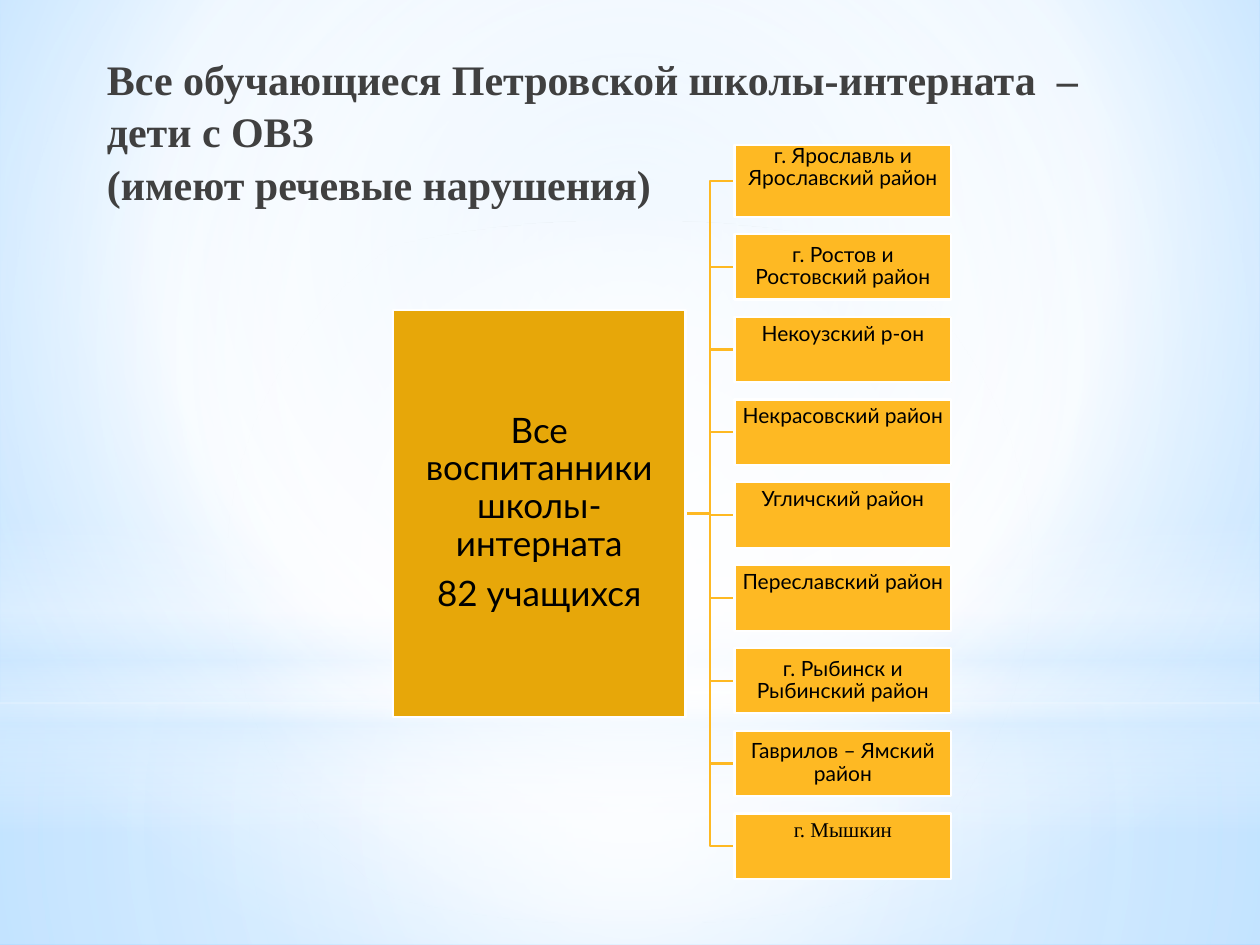
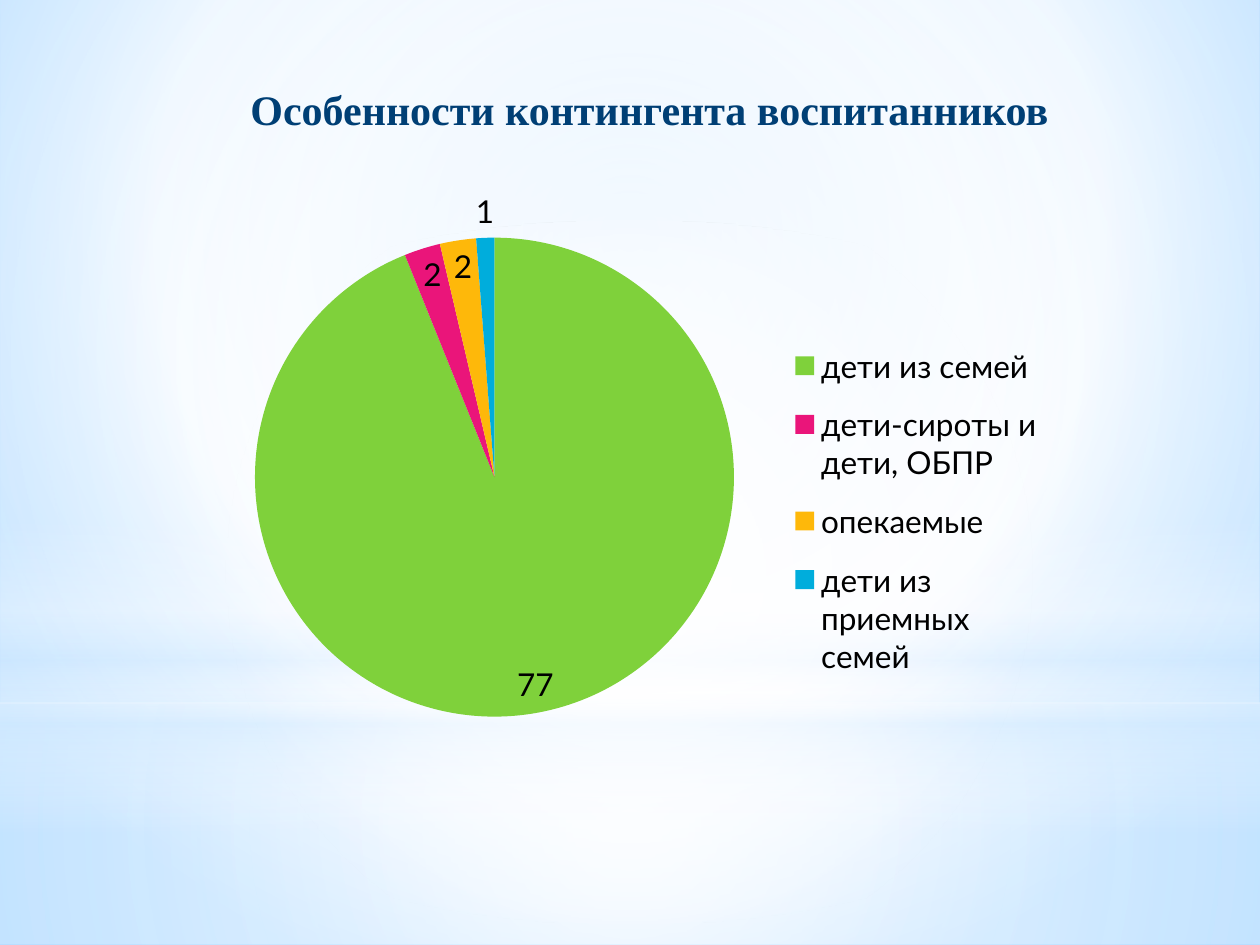
from pptx import Presentation
from pptx.chart.data import CategoryChartData
from pptx.dml.color import RGBColor
from pptx.enum.chart import XL_CHART_TYPE, XL_LABEL_POSITION, XL_LEGEND_POSITION
from pptx.enum.shapes import MSO_SHAPE
from pptx.enum.text import MSO_ANCHOR, PP_ALIGN
from pptx.oxml import parse_xml
from pptx.oxml.ns import nsdecls, qn
from pptx.util import Inches, Pt

RECT, OVAL = MSO_SHAPE.RECTANGLE, MSO_SHAPE.OVAL
TOP, MIDDLE = MSO_ANCHOR.TOP, MSO_ANCHOR.MIDDLE
LEFT, CENTER, RIGHT = PP_ALIGN.LEFT, PP_ALIGN.CENTER, PP_ALIGN.RIGHT
PIE, BEST_FIT = XL_CHART_TYPE.PIE, XL_LABEL_POSITION.BEST_FIT
LEGEND_RIGHT = XL_LEGEND_POSITION.RIGHT

SERIF, SANS = "Times New Roman", "Lato"
COLORS = {
    "white": "FFFFFF", "mist": "D6ECFF", "sky": "C2E3FF", "azure": "79C1FF",
    "text": "000000", "grey": "404040", "navy": "003F75",
    "root": "E7A709", "leaf": "FEB923",
    "green": "7FD13B", "pink": "EA157A", "amber": "FEB80A", "blue": "00ADDC",
}
CENTERED = (50, 50, 50, 50)

BACKDROP = [
    (RECT, (0, 5.58, 10, 1.92),
     [(0, "white", 91), (37, "white", 76), (100, "mist", 79)], CENTERED),
    (RECT, (0, 0, 10, 5.58),
     [(0, "white", 89), (48, "white", 62), (100, "mist", 79)], CENTERED),
    (RECT, (0, 4.12, 10, 2.5),
     [(0, "white", 0), (29, "white", 30), (45, "mist", 40),
      (55, "white", 26), (65, "mist", 60), (100, "white", 0)], None),
    (OVAL, (0, 1.75, 10, 5.58),
     [(0, "white", 100), (56, "white", 0)], CENTERED),
]

DISTRICTS = [
    ("г. Ярославль и Ярославский район", SANS, 0),
    ("г. Ростов и Ростовский район", SANS, None),
    ("Некоузский р-он", SANS, 0.05),
    ("Некрасовский район", SANS, 0.05),
    ("Угличский район", SANS, 0.05),
    ("Переславский район", SANS, 0.05),
    ("г. Рыбинск и Рыбинский район", SANS, None),
    ("Гаврилов – Ямский район", SANS, None),
    ("г. Мышкин", SERIF, 0.05),
]

PUPILS = [
    ("дети из семей", 77, "green"),
    ("дети-сироты и дети, ОБПР", 2, "pink"),
    ("опекаемые", 2, "amber"),
    ("дети из приемных семей", 1, "blue"),
]


def rgb(name):
    """Return a palette colour."""
    return RGBColor.from_string(COLORS[name])


def set_gradient(parent, stops, focus=None):
    """Replace the solid fill in parent by a circular or downward gradient."""
    marks = "".join(
        f'<a:gs pos="{pos * 1000}"><a:srgbClr val="{COLORS[name]}">'
        f'<a:alpha val="{alpha * 1000}"/></a:srgbClr></a:gs>'
        for pos, name, alpha in stops)
    course = '<a:lin ang="5400000" scaled="0"/>'
    if focus:
        sides = " ".join(f'{side}="{v * 1000}"' for side, v in zip("ltrb", focus))
        course = f'<a:path path="circle"><a:fillToRect {sides}/></a:path>'
    grad = parse_xml(f'<a:gradFill {nsdecls("a")} rotWithShape="1">'
                     f'<a:gsLst>{marks}</a:gsLst>{course}</a:gradFill>')
    parent.replace(parent.find(qn("a:solidFill")), grad)


def add_box(slide, kind, box, fill, line=None):
    """Add a flat filled shape."""
    s = slide.shapes.add_shape(kind, *map(Inches, box))
    s.shadow.inherit = False
    s.fill.solid()
    s.fill.fore_color.rgb = rgb(fill)
    if line:
        s.line.color.rgb = rgb(line)
        s.line.width = Pt(1.25)
    else:
        s.line.fill.background()
    return s


def write(s, text, font, size, color, align, bold=False, spacing=0.9):
    """Put text in a shape and format every run."""
    tf = s.text_frame
    tf.word_wrap = True
    tf.text = text
    for p in tf.paragraphs:
        p.alignment = align
        p.line_spacing = spacing
        p.space_after = Pt(size * 0.35)
        for r in p.runs:
            r.font.name, r.font.size, r.font.bold = font, Pt(size), bold
            r.font.color.rgb = rgb(color)
    return tf


def set_background(prs):
    """Give the master the sky gradient."""
    master = prs.slide_master
    master.background.fill.solid()
    set_gradient(master.element.find(".//" + qn("p:bgPr")),
                 [(0, "sky", 100), (60, "white", 100), (100, "azure", 100)],
                 (20, 10, 20, 60))


def add_base_slide(prs):
    """Add a blank slide with the light layers."""
    slide = prs.slides.add_slide(prs.slide_layouts[6])
    for kind, box, stops, focus in BACKDROP:
        s = add_box(slide, kind, box, "white")
        set_gradient(s.element.spPr, stops, focus)
    return slide


def add_title(slide, text, box, color, align):
    """Add the bold serif title."""
    s = slide.shapes.add_textbox(*map(Inches, box))
    write(s, text, SERIF, 24, color, align, True, 1.04)


def add_block(slide, box, fill, text, font, size, top=None):
    """Add a chart block, its text centred or starting at the given inset."""
    s = add_box(slide, RECT, box, fill, "white")
    tf = write(s, text, font, size, "text", CENTER)
    tf.margin_left = tf.margin_right = Inches(0.01)
    tf.margin_top, tf.margin_bottom = Inches(top or 0), 0
    tf.vertical_anchor = MIDDLE if top is None else TOP
    return s


def add_branch(slide, x1, y1, x2, y2):
    """Draw an elbow line between two points."""
    mid = (x1 + x2) / 2
    builder = slide.shapes.build_freeform(Inches(x1), Inches(y1))
    builder.add_line_segments(
        [(Inches(x), Inches(y)) for x, y in ((mid, y1), (mid, y2), (x2, y2))],
        close=False)
    s = builder.convert_to_shape()
    s.shadow.inherit = False
    s.fill.background()
    s.line.color.rgb = rgb("leaf")
    s.line.width = Pt(1.25)


def add_district_tree(slide, x, y):
    """Draw the root block and its districts from the given top left corner."""
    root = (x, y + 1.31, 2.32, 3.23)
    leaf_x, leaf_y, gap = x + 2.71, y, 0.137
    root_y = root[1] + root[3] / 2
    for i, (text, font, top) in enumerate(DISTRICTS):
        height = 0.52 if i else 0.57
        add_branch(slide, x + root[2], root_y, leaf_x, leaf_y + height / 2)
        add_block(slide, (leaf_x, leaf_y, 1.72, height), "leaf", text, font, 12, top)
        leaf_y += height + gap
    s = add_block(slide, root, "root",
                  "Все воспитанники школы-интерната\n82 учащихся", SANS, 20)
    s.text_frame.margin_left = s.text_frame.margin_right = Inches(0.08)


def set_layout(element, index, target, box):
    """Fix the place of a chart part as fractions of the chart."""
    for old in element.findall(qn("c:layout")):
        element.remove(old)
    inner = '<c:layoutTarget val="inner"/>' if target else ""
    modes = '<c:xMode val="edge"/><c:yMode val="edge"/>'
    sizes = "".join(f'<c:{k} val="{v}"/>' for k, v in zip("xywh", box))
    element.insert(index, parse_xml(
        f'<c:layout {nsdecls("c")}><c:manualLayout>{inner}{modes}{sizes}'
        '</c:manualLayout></c:layout>'))


def add_pupils_pie(slide, box):
    """Add the pie of pupil groups."""
    data = CategoryChartData()
    data.categories = [name for name, _, _ in PUPILS]
    data.add_series("Series 1", [value for _, value, _ in PUPILS])
    chart = slide.shapes.add_chart(PIE, *map(Inches, box), data).chart
    chart.has_title = False
    chart.font.name, chart.font.size = SANS, Pt(18)
    chart.font.color.rgb = rgb("text")
    chart.has_legend = True
    chart.legend.position = LEGEND_RIGHT
    chart.legend.include_in_layout = False
    plot = chart.plots[0]
    plot.vary_by_categories = True
    plot.has_data_labels = True
    plot.data_labels.show_value = True
    plot.data_labels.show_percentage = False
    plot.data_labels.position = BEST_FIT
    for i, (_, _, color) in enumerate(PUPILS):
        fill = plot.series[0].points[i].format.fill
        fill.solid()
        fill.fore_color.rgb = rgb(color)
    area = chart.element.find(".//" + qn("c:plotArea"))
    legend = chart.element.find(".//" + qn("c:legend"))
    set_layout(area, 0, True, (0.05, 0.11, 0.57, 0.86))
    set_layout(legend, 1, False, (0.69, 0.27, 0.3, 0.66))


def build_districts_slide(prs):
    """Build the slide on where the pupils come from."""
    slide = add_base_slide(prs)
    add_title(slide, "Все обучающиеся Петровской школы-интерната  – дети с ОВЗ\v"
              "(имеют речевые нарушения)", (0.75, 0.36, 8.58, 0.63), "grey", LEFT)
    add_district_tree(slide, 3.12, 1.15)


def build_pupils_slide(prs):
    """Build the slide on the groups of pupils."""
    slide = add_base_slide(prs)
    add_title(slide, "Особенности контингента воспитанников",
              (1.3, 0.6, 7.12, 1.25), "navy", RIGHT)
    add_pupils_pie(slide, (1.69, 1.39, 6.67, 4.44))


def main():
    """Build and save the presentation."""
    prs = Presentation()
    prs.slide_width, prs.slide_height = Inches(10), Inches(7.5)
    set_background(prs)
    build_districts_slide(prs)
    build_pupils_slide(prs)
    prs.save("out.pptx")


if __name__ == "__main__":
    main()
